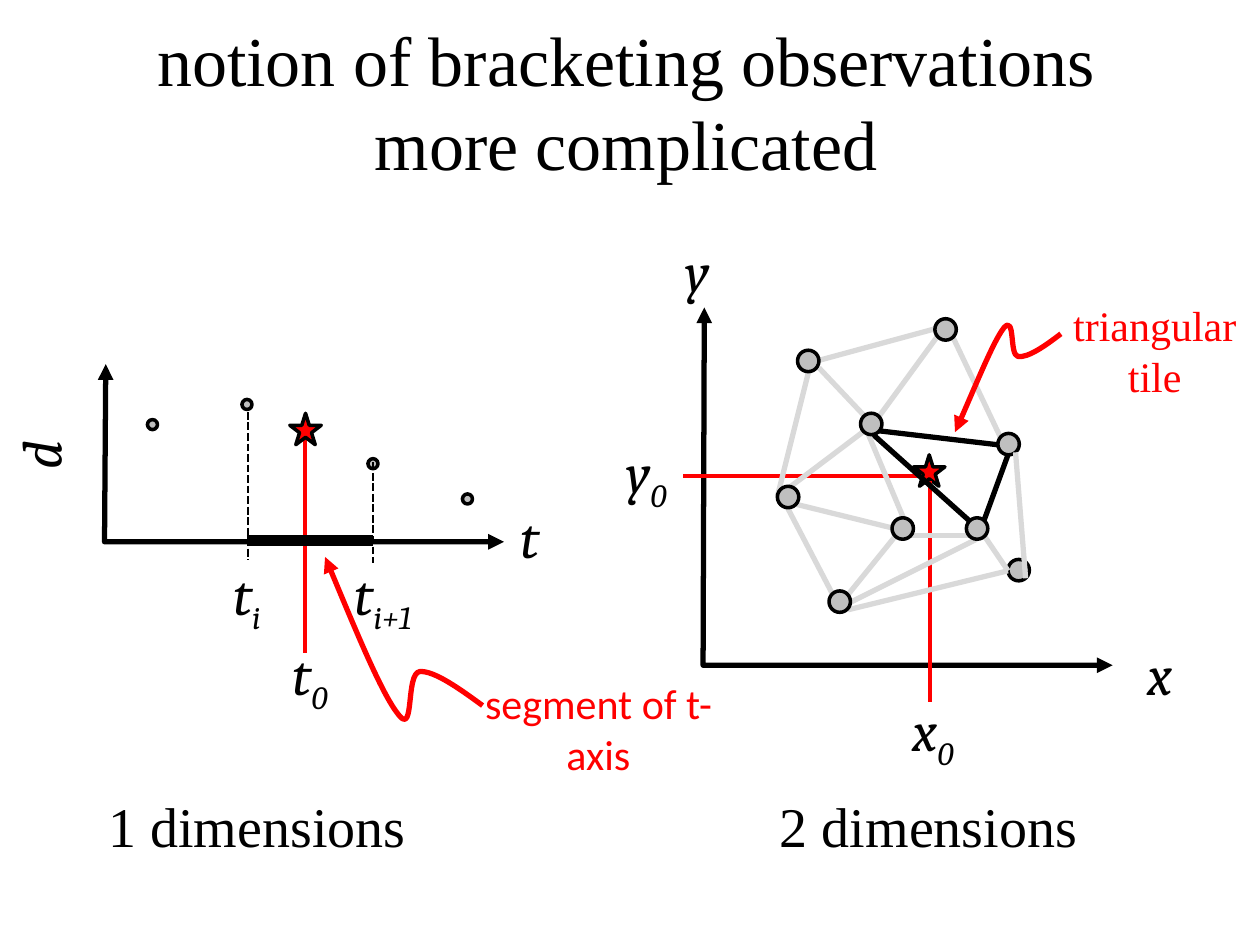
import dataclasses

import lxml.etree
import pptx
import pptx.dml.color
import pptx.enum.dml
import pptx.enum.shapes
import pptx.enum.text
import pptx.oxml.ns
import pptx.util

Inches = pptx.util.Inches
qualified = pptx.oxml.ns.qn


@dataclasses.dataclass(frozen=True)
class Theme:
    black: str = "000000"
    red: str = "FF0000"
    node_gray: str = "BFBFBF"
    edge_gray: str = "D9D9D9"
    serif: str = "Times New Roman"
    math: str = "Cambria"
    sans: str = "Calibri"
    title_size: int = 40
    label_size: int = 32
    note_size: int = 24
    outline: float = 2
    guide: float = 2.25
    dash: float = 1.5
    stroke: float = 3
    segment: float = 6


class SlideBuilder:
    """Draws styled text, lines and shapes on one slide."""

    def __init__(self, slide, theme):
        self.slide = slide
        self.theme = theme

    def color(self, value):
        return pptx.dml.color.RGBColor.from_string(value)

    def style_line(self, shape, color, width):
        shape.line.color.rgb = self.color(color)
        shape.line.width = pptx.util.Pt(width)

    def text(self, box, words, font, size, color, subscript="", italic=False,
             middle=False, rotation=0):
        shape = self.slide.shapes.add_textbox(*map(Inches, box))
        shape.rotation = rotation
        frame = shape.text_frame
        frame.word_wrap = True
        if middle:
            frame.vertical_anchor = pptx.enum.text.MSO_ANCHOR.MIDDLE
        paragraph = frame.paragraphs[0]
        paragraph.alignment = pptx.enum.text.PP_ALIGN.CENTER
        for content, baseline in ((words, None), (subscript, "-25000")):
            if not content:
                continue
            run = paragraph.add_run()
            run.text = content
            run.font.name = font
            run.font.size = pptx.util.Pt(size)
            run.font.italic = italic
            run.font.color.rgb = self.color(color)
            if baseline:
                run.font._element.set("baseline", baseline)

    def heading(self, box, words, size):
        self.text(box, words, self.theme.serif, size, self.theme.black, middle=True)

    def variable(self, left, top, width, name, subscript="", rotation=0):
        self.text((left, top, width, 0.64), name, self.theme.math, self.theme.label_size,
                  self.theme.black, subscript, italic=True, rotation=rotation)

    def note(self, left, top, width, words, font):
        self.text((left, top, width, 0.91), words, font, self.theme.note_size, self.theme.red)

    def line(self, ends, color, width, dashed=False):
        connector = self.slide.shapes.add_connector(
            pptx.enum.shapes.MSO_CONNECTOR.STRAIGHT, *map(Inches, ends))
        self.style_line(connector, color, width)
        if dashed:
            connector.line.dash_style = pptx.enum.dml.MSO_LINE.SQUARE_DOT
        lxml.etree.SubElement(connector.element.spPr, qualified("a:effectLst"))

    def mark(self, kind, left, top, size, fill):
        shape = self.slide.shapes.add_shape(kind, *map(Inches, (left, top, size, size)))
        shape.shadow.inherit = False
        shape.fill.solid()
        shape.fill.fore_color.rgb = self.color(fill)
        self.style_line(shape, self.theme.black, self.theme.outline)

    def node(self, left, top, size):
        self.mark(pptx.enum.shapes.MSO_SHAPE.OVAL, left, top, size, self.theme.node_gray)

    def star(self, left, top):
        self.mark(pptx.enum.shapes.MSO_SHAPE.STAR_5_POINT, left, top, 0.25, self.theme.red)

    def outline(self, points, color, arrow_ends):
        start, *others = [tuple(map(Inches, point)) for point in points]
        builder = self.slide.shapes.build_freeform(*start)
        builder.add_line_segments(others, close=False)
        shape = builder.convert_to_shape()
        shape.shadow.inherit = False
        shape.fill.background()
        self.style_line(shape, color, self.theme.stroke)
        line = shape.element.spPr.find(qualified("a:ln"))
        for end in arrow_ends:
            lxml.etree.SubElement(line, qualified("a:" + end), type="triangle")
        return shape

    def axes(self, points):
        self.outline(points, self.theme.black, ("headEnd", "tailEnd"))

    def curved_arrow(self, points):
        shape = self.outline(points, self.theme.red, ("headEnd",))
        segments = list(shape.element.iter(qualified("a:lnTo")))
        for index in range(0, len(segments), 3):
            first, *controls = segments[index:index + 3]
            first.tag = qualified("a:cubicBezTo")
            for control in controls:
                first.append(control[0])
                control.getparent().remove(control)


def draw_one_dimension(builder):
    theme = builder.theme
    builder.heading((0, 5.92, 4.08, 1.25), "1 dimensions", theme.label_size)
    builder.axes([(0.84, 2.89), (0.83, 4.3), (4, 4.3)])
    builder.variable(3.92, 3.94, 0.58, "t")
    builder.variable(-0.35, 3.29, 1.33, "d", rotation=270)
    builder.node(2.92, 3.64, 0.08)
    for ends in ((1.97, 3.27, 1.97, 4.44), (2.96, 3.67, 2.96, 4.47)):
        builder.line(ends, theme.black, theme.dash, dashed=True)
    builder.variable(1.67, 4.39, 0.58, "t", "i")
    builder.variable(2.5, 4.39, 1.08, "t", "i+1")
    builder.line((2.42, 3.43, 2.42, 5.18), theme.red, theme.guide)
    builder.variable(1.92, 5.03, 1.08, "t", "0")
    builder.star(2.3, 3.28)
    for left, top in ((1.92, 3.17), (3.67, 3.92), (1.17, 3.33)):
        builder.node(left, top, 0.08)
    builder.line((1.96, 4.29, 2.96, 4.29), theme.black, theme.segment)
    builder.curved_arrow([(2.58, 4.42), (2.81, 4.97), (3.04, 5.53), (3.17, 5.68),
                          (3.29, 5.83), (3.22, 5.35), (3.33, 5.33),
                          (3.44, 5.32), (3.64, 5.46), (3.83, 5.6)])
    builder.note(3.75, 5.33, 2, "segment of t-axis", theme.sans)


def draw_two_dimensions(builder):
    theme = builder.theme
    builder.heading((5.33, 5.92, 4.08, 1.25), "2 dimensions", theme.label_size)
    builder.axes([(5.59, 2.44), (5.58, 5.28), (8.83, 5.28)])
    builder.node(8, 4.44, 0.17)
    builder.star(7.25, 3.61)
    builder.variable(8.92, 5.03, 0.58, "x")
    builder.variable(4.67, 3.42, 0.92, "y", "0")
    for ends in ((7.38, 3.82, 7.38, 5.57), (7.32, 3.78, 5.42, 3.78)):
        builder.line(ends, theme.red, theme.guide)
    builder.variable(6.78, 5.47, 1.25, "x", "0")
    builder.variable(5.08, 1.83, 0.92, "y")

    tile_edges = ((6.98, 3.42, 7.92, 3.53), (6.92, 3.44, 7.69, 4.13), (8, 3.61, 7.81, 4.13))
    mesh_edges = (
        (7.44, 2.67, 6.98, 3.3), (7.56, 2.67, 7.94, 3.47), (6.86, 3.42, 6.25, 3.88),
        (7.08, 4.19, 6.31, 4), (6.61, 4.72, 6.25, 4.03), (6.73, 4.72, 7.11, 4.25),
        (7.17, 4.11, 6.88, 3.42), (7.23, 4.25, 7.69, 4.25), (6.75, 4.78, 7.75, 4.28),
        (6.73, 4.84, 8, 4.53), (7.81, 4.25, 8, 4.53), (6.5, 2.92, 6.86, 3.3),
        (6.5, 2.86, 7.42, 2.61), (6.42, 2.94, 6.17, 3.94))
    for edges, color in ((tile_edges, theme.black), (mesh_edges, theme.edge_gray)):
        for ends in edges:
            builder.line(ends, color, theme.stroke)
    for left, top in ((6.33, 2.78), (6.17, 3.86), (7.08, 4.11), (6.58, 4.69),
                      (6.83, 3.28), (7.42, 2.53), (7.92, 3.44), (7.67, 4.11)):
        builder.node(left, top, 0.17)
    builder.line((8.06, 3.59, 8.14, 4.59), theme.edge_gray, theme.stroke)
    builder.curved_arrow([(7.58, 3.43), (7.74, 3.07), (7.89, 2.7), (7.97, 2.6),
                          (8.06, 2.5), (8.01, 2.82), (8.08, 2.83),
                          (8.16, 2.84), (8.29, 2.75), (8.42, 2.65)])
    builder.note(8.33, 2.33, 1.67, "triangular tile", theme.serif)


def main():
    presentation = pptx.Presentation()
    presentation.slide_width = Inches(10)
    presentation.slide_height = Inches(7.5)
    slide = presentation.slides.add_slide(presentation.slide_layouts[6])
    builder = SlideBuilder(slide, Theme())
    builder.heading((0.97, 0.17, 8, 1.25), "notion of bracketing observations more complicated",
                    builder.theme.title_size)
    draw_two_dimensions(builder)
    draw_one_dimension(builder)
    presentation.save("out.pptx")


if __name__ == "__main__":
    main()
